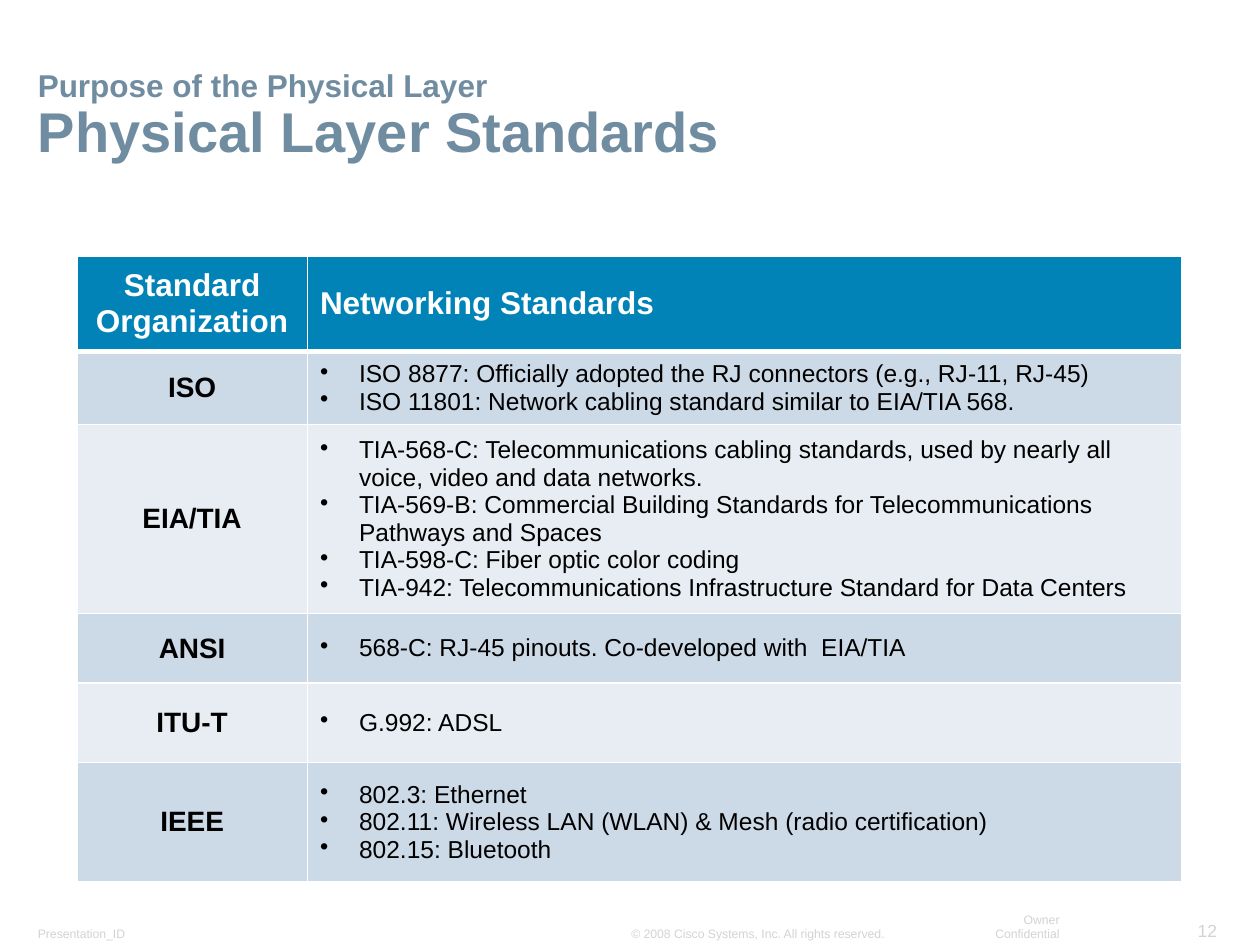
import dataclasses
import pptx
import pptx.dml.color
import pptx.enum.text
import pptx.oxml
import pptx.oxml.ns
import pptx.util

ALIGN = pptx.enum.text.PP_ALIGN
ANCHOR = pptx.enum.text.MSO_ANCHOR
WIDE, HIGH = 10, 7.5
COLS, ROWS = 100, 75


@dataclasses.dataclass(frozen=True)
class Theme:
    face: str = "Arial"
    title: str = "708CA1"
    foot: str = "D3D3D3"
    head: str = "0183B7"
    bands: tuple = ("CCD9E6", "E7EDF3")
    white: str = "FFFFFF"
    ink: str = "000000"
    big: int = 32
    mid: int = 18
    label: int = 16
    body: int = 14
    page: int = 10
    small: int = 7


THEME = Theme()

STANDARDS = [
    ("ISO", 5.8, [
        "ISO 8877: Officially adopted the RJ connectors (e.g., RJ-11, RJ-45)",
        "ISO 11801: Network cabling standard similar to EIA/TIA 568."]),
    ("EIA/TIA", 13, [
        "TIA-568-C: Telecommunications cabling standards, used by nearly all "
        "voice, video and data networks.",
        "TIA-569-B: Commercial Building Standards for Telecommunications "
        "Pathways and Spaces",
        "TIA-598-C: Fiber optic color coding",
        "TIA-942: Telecommunications Infrastructure Standard for Data Centers"]),
    ("ANSI", 5.5, ["568-C: RJ-45 pinouts. Co-developed with  EIA/TIA"]),
    ("ITU-T", 6.3, ["G.992: ADSL"]),
    ("IEEE", 9.5, [
        "802.3: Ethernet",
        "802.11: Wireless LAN (WLAN) & Mesh (radio certification)",
        "802.15: Bluetooth"]),
]


def across(count):
    return pptx.util.Inches(WIDE * count / COLS)


def down(count):
    return pptx.util.Inches(HIGH * count / ROWS)


def style(para, size, color, bold=False, align=ALIGN.LEFT):
    para.alignment = align
    font = para.font
    font.name, font.size, font.bold = THEME.face, pptx.util.Pt(size), bold
    font.color.rgb = pptx.dml.color.RGBColor.from_string(color)


def add_box(slide, left, top, width, height, wrap=True):
    box = slide.shapes.add_textbox(across(left), down(top), across(width), down(height))
    frame = box.text_frame
    frame.word_wrap = wrap
    frame.vertical_anchor = ANCHOR.BOTTOM
    frame.margin_left = frame.margin_right = across(0.9)
    frame.margin_top = frame.margin_bottom = down(0.4)
    return frame.paragraphs[0]


def add_title(slide, lead, main):
    para = add_box(slide, 2.1, 4.3, 95.9, 9.2)
    para.line_spacing = 0.9
    style(para, THEME.mid, THEME.title, bold=True)
    para.add_run().text = lead
    para.add_line_break()
    run = para.add_run()
    run.text = main
    run.font.size = pptx.util.Pt(THEME.big)


def add_note(slide, text, place, size=THEME.small, align=ALIGN.LEFT, wrap=False):
    para = add_box(slide, *place, wrap=wrap)
    para.text = text
    style(para, size, THEME.foot, align=align)


def add_bullet(para):
    props = para._p.get_or_add_pPr()
    indent = across(3.1)
    props.set("marL", str(indent))
    props.set("indent", str(-indent))
    props.append(pptx.oxml.parse_xml(
        f'<a:buChar {pptx.oxml.ns.nsdecls("a")} char="•"/>'))


def set_edges(cell, **widths):
    props = cell._tc.get_or_add_tcPr()
    for side in "LRTB":
        width = pptx.util.Pt(widths.get(side, 1))
        props.append(pptx.oxml.parse_xml(
            f'<a:ln{side} {pptx.oxml.ns.nsdecls("a")} w="{width}"><a:solidFill>'
            f'<a:srgbClr val="{THEME.white}"/></a:solidFill></a:ln{side}>'))


def fill_cell(cell, lines, fill, size, color, bold, align, bullets=False, **edges):
    set_edges(cell, **edges)
    cell.fill.solid()
    cell.fill.fore_color.rgb = pptx.dml.color.RGBColor.from_string(fill)
    cell.vertical_anchor = ANCHOR.MIDDLE
    frame = cell.text_frame
    for index, line in enumerate(lines):
        para = frame.add_paragraph() if index else frame.paragraphs[0]
        para.text = line
        if bullets:
            add_bullet(para)
        style(para, size, color, bold, align)


def add_grid(slide):
    heights = [7.6] + [height for _, height, _ in STANDARDS]
    widths = [18.3, 69.4]
    table = slide.shapes.add_table(
        len(heights), len(widths), across(6.1), down(20.3),
        across(sum(widths)), down(sum(heights))).table
    table.first_row = table.horz_banding = False
    for column, width in zip(table.columns, widths):
        column.width = across(width)
    for row, height in zip(table.rows, heights):
        row.height = down(height)

    heads = [("Standard Organization", ALIGN.CENTER), ("Networking Standards", ALIGN.LEFT)]
    for index, (text, align) in enumerate(heads):
        fill_cell(table.cell(0, index), [text], THEME.head, THEME.mid,
                  THEME.white, True, align, B=3)
    for index, (name, _, items) in enumerate(STANDARDS):
        fill = THEME.bands[index % 2]
        edges = {"T": 1 if index else 3}
        fill_cell(table.cell(index + 1, 0), [name], fill, THEME.label,
                  THEME.ink, True, ALIGN.CENTER, **edges)
        fill_cell(table.cell(index + 1, 1), items, fill, THEME.body,
                  THEME.ink, False, ALIGN.LEFT, bullets=True, **edges)


def main():
    deck = pptx.Presentation()
    deck.slide_width, deck.slide_height = across(COLS), down(ROWS)
    slide = deck.slides.add_slide(deck.slide_layouts[6])
    add_note(slide, "Presentation_ID", (2.1, 73, 10.5, 2.1), wrap=True)
    add_note(slide, "12", (94, 72.5, 3.5, 2.6), THEME.page, ALIGN.RIGHT)
    add_note(slide, "© 2008 Cisco Systems, Inc. All rights reserved.", (49.2, 73, 22.1, 2.1))
    add_note(slide, "Owner Confidential", (75.4, 73, 9.6, 2.1), align=ALIGN.RIGHT)
    add_title(slide, "Purpose of the Physical Layer", "Physical Layer Standards")
    add_grid(slide)
    deck.save("out.pptx")


if __name__ == "__main__":
    main()
